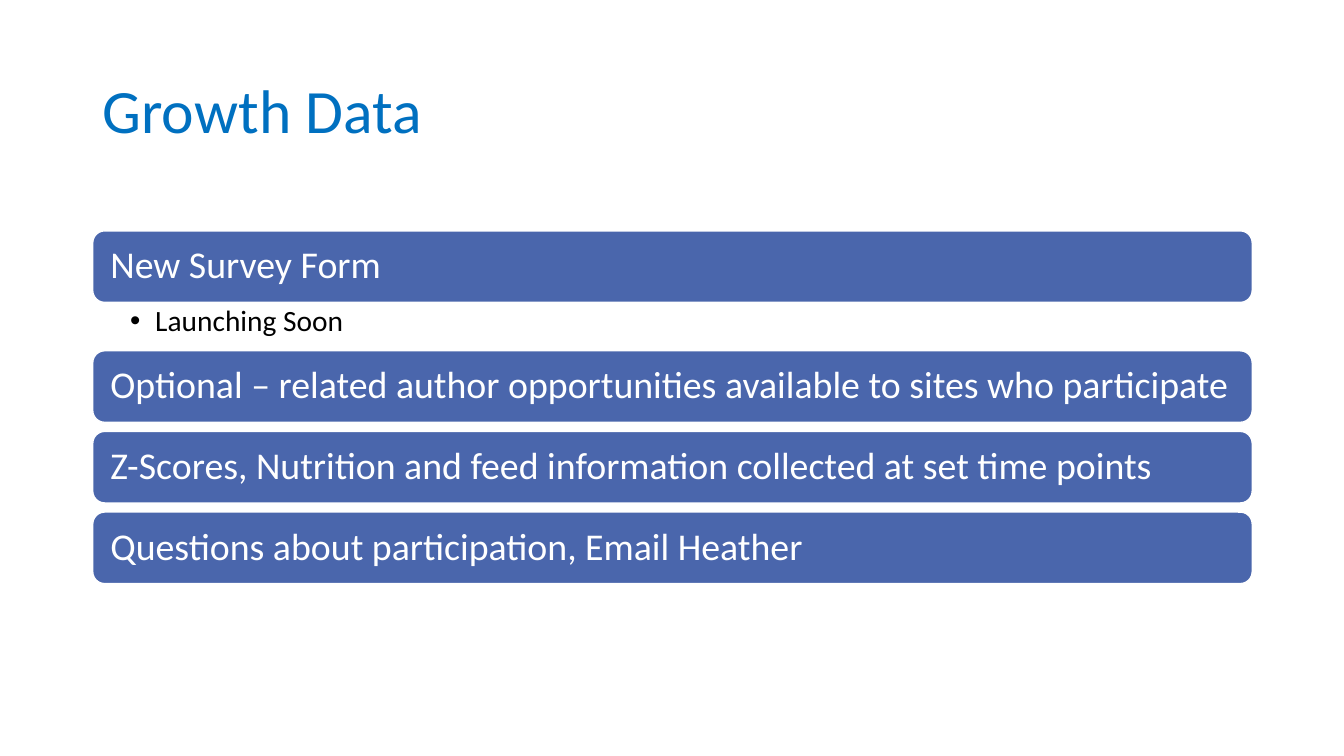
from dataclasses import dataclass

from lxml.etree import SubElement
from pptx import Presentation
from pptx.dml.color import RGBColor
from pptx.enum.shapes import MSO_SHAPE
from pptx.enum.text import MSO_ANCHOR, PP_ALIGN
from pptx.oxml.ns import qn
from pptx.shapes.autoshape import Shape
from pptx.slide import Slide
from pptx.util import Inches, Pt


@dataclass(frozen=True)
class Theme:
    font: str = "Calibri"
    title: RGBColor = RGBColor(0x00, 0x70, 0xC0)
    bar: RGBColor = RGBColor(0x4A, 0x66, 0xAC)
    white: RGBColor = RGBColor(0xFF, 0xFF, 0xFF)
    black: RGBColor = RGBColor(0x00, 0x00, 0x00)
    big: int = 44
    body: int = 27
    small: int = 21


@dataclass(frozen=True)
class Topic:
    text: str
    note: str = ""


THEME = Theme()
LEFT, WIDTH = 0.92, 11.5
TOP, HEIGHT, GAP = 2.29, 0.71, 0.09
DROP = 0.48
TOPICS = [
    Topic("New Survey Form", "Launching Soon"),
    Topic("Optional – related author opportunities available to sites who participate"),
    Topic("Z-Scores, Nutrition and feed information collected at set time points"),
    Topic("Questions about participation, Email Heather"),
]


def write(shape: Shape, text: str, *, size: int, color: RGBColor,
          pad: tuple[float, float] = (0.1, 0.05),
          anchor: MSO_ANCHOR = MSO_ANCHOR.MIDDLE, bullet: bool = False) -> None:
    frame = shape.text_frame
    frame.word_wrap = True
    frame.vertical_anchor = anchor
    frame.margin_left = frame.margin_right = Inches(pad[0])
    frame.margin_top = frame.margin_bottom = Inches(pad[1])
    para = frame.paragraphs[0]
    para.alignment = PP_ALIGN.LEFT
    para.line_spacing = 0.9
    if bullet:
        props = para._p.get_or_add_pPr()
        props.set("marL", str(Inches(0.25)))
        props.set("indent", str(Inches(-0.25)))
        SubElement(props, qn("a:buFont"), typeface="Arial")
        SubElement(props, qn("a:buChar"), char="•")
    run = para.add_run()
    run.text = text
    run.font.name = THEME.font
    run.font.size = Pt(size)
    run.font.color.rgb = color


def add_box(slide: Slide, top: float, height: float) -> Shape:
    return slide.shapes.add_textbox(
        Inches(LEFT), Inches(top), Inches(WIDTH), Inches(height))


def add_bar(slide: Slide, top: float) -> Shape:
    bar = slide.shapes.add_shape(
        MSO_SHAPE.ROUNDED_RECTANGLE,
        Inches(LEFT), Inches(top), Inches(WIDTH), Inches(HEIGHT))
    bar.shadow.inherit = False
    bar.fill.solid()
    bar.fill.fore_color.rgb = THEME.bar
    bar.line.color.rgb = THEME.white
    bar.line.width = Pt(1)
    return bar


def add_list(slide: Slide, topics: list[Topic]) -> None:
    top = TOP
    for topic in topics:
        write(add_bar(slide, top), topic.text, size=THEME.body,
              color=THEME.white, pad=(0.14, 0.11))
        top += HEIGHT
        if topic.note:
            write(add_box(slide, top, DROP), topic.note, size=THEME.small,
                  color=THEME.black, pad=(0.37, 0.04),
                  anchor=MSO_ANCHOR.TOP, bullet=True)
        top += DROP if topic.note else GAP


def main() -> None:
    deck = Presentation()
    deck.slide_width, deck.slide_height = Inches(13.33), Inches(7.5)
    slide = deck.slides.add_slide(deck.slide_layouts[6])
    write(add_box(slide, 0.4, 1.45), "Growth Data",
          size=THEME.big, color=THEME.title)
    add_list(slide, TOPICS)
    deck.save("out.pptx")


if __name__ == "__main__":
    main()
